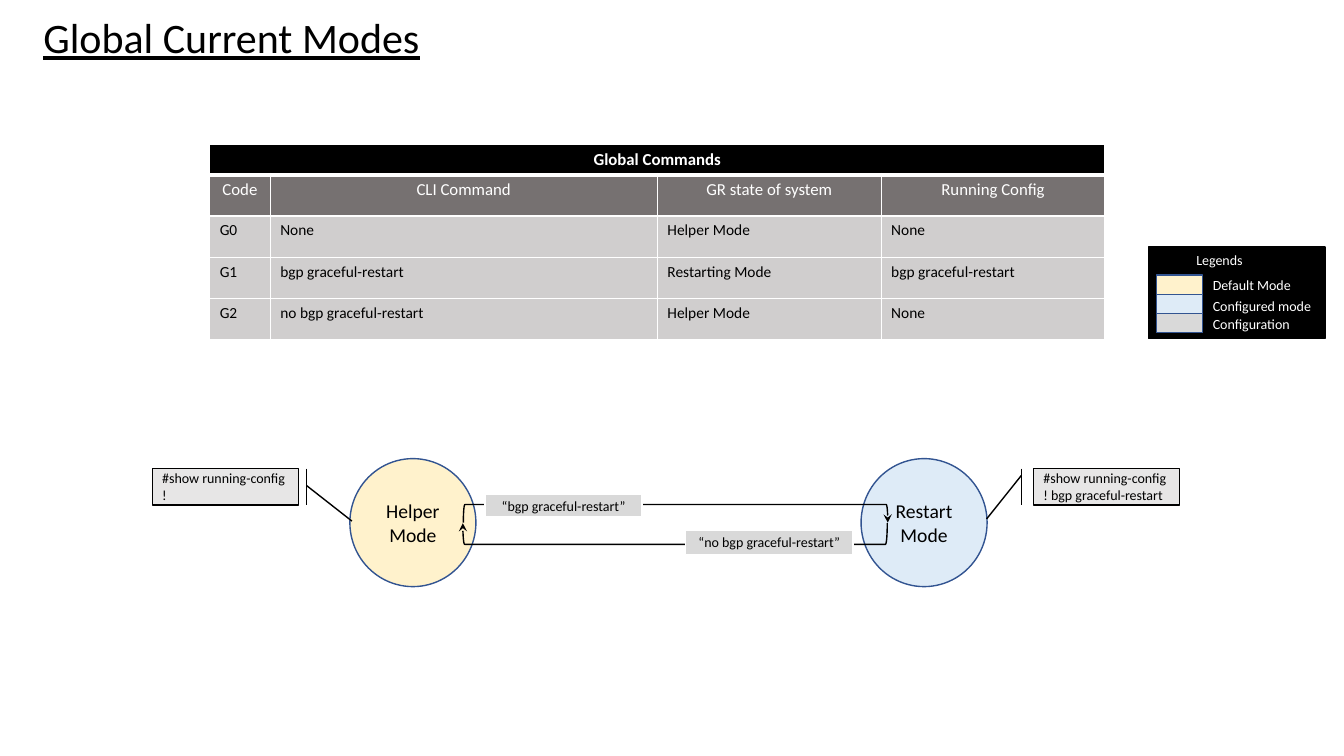
from lxml.etree import SubElement
from pptx import Presentation
from pptx.dml.color import RGBColor
from pptx.enum.shapes import MSO_SHAPE as Shape
from pptx.enum.text import MSO_ANCHOR as Anchor, MSO_AUTO_SIZE as AutoSize, PP_ALIGN as Align
from pptx.oxml.ns import qn
from pptx.util import Inches, Pt

FONT = "Calibri"
BLACK = RGBColor(0x00, 0x00, 0x00)
WHITE = RGBColor(0xFF, 0xFF, 0xFF)
HEADING_GRAY = RGBColor(0x76, 0x71, 0x71)
ROW_GRAY = RGBColor(0xD0, 0xCE, 0xCE)
CONFIG_GRAY = RGBColor(0xD9, 0xD9, 0xD9)
CALLOUT_GRAY = RGBColor(0xE7, 0xE6, 0xE6)
DEFAULT_CREAM = RGBColor(0xFF, 0xF2, 0xCC)
CONFIGURED_BLUE = RGBColor(0xDE, 0xEB, 0xF7)
OUTLINE_BLUE = RGBColor(0x32, 0x54, 0x91)

COLUMN_WIDTHS = (0.6, 3.84, 2.22, 2.22)
COMMAND_ROWS = (
    ("Global Commands", "", "", ""),
    ("Code", "CLI Command", "GR state of system", "Running Config"),
    ("G0", "None", "Helper Mode", "None"),
    ("G1", "bgp graceful-restart", "Restarting Mode", "bgp graceful-restart"),
    ("G2", "no bgp graceful-restart", "Helper Mode", "None"),
)
LEGEND = (
    ("Default Mode", DEFAULT_CREAM, 2.69),
    ("Configured mode", CONFIGURED_BLUE, 2.9),
    ("Configuration", CONFIG_GRAY, 3.08),
)


def write(frame, lines, size, color=BLACK, align=Align.LEFT, bold=False):
    for index, line in enumerate(lines):
        paragraph = frame.add_paragraph() if index else frame.paragraphs[0]
        paragraph.alignment = align
        run = paragraph.add_run()
        run.text = line
        run.font.name = FONT
        run.font.size = Pt(size)
        run.font.bold = bold
        run.font.color.rgb = color


def add_block(shapes, preset, box, fill, line, lines=(), size=10, align=Align.CENTER):
    block = shapes.add_shape(preset, *map(Inches, box))
    block.shadow.inherit = False
    if fill is None:
        block.fill.background()
    else:
        block.fill.solid()
        block.fill.fore_color.rgb = fill
    block.line.color.rgb = line
    block.line.width = Pt(1)
    block.text_frame.vertical_anchor = Anchor.MIDDLE
    write(block.text_frame, lines, size, align=align)
    return block


def add_label(shapes, box, text, align=Align.LEFT):
    label = shapes.add_textbox(*map(Inches, box)).text_frame
    label.word_wrap = True
    label.auto_size = AutoSize.SHAPE_TO_FIT_TEXT
    write(label, [text], 10, WHITE, align)


def add_transition(shapes, box, rotation):
    bracket = add_block(shapes, Shape.LEFT_BRACKET, box, None, BLACK)
    bracket.rotation = rotation
    SubElement(bracket.line._get_or_add_ln(), qn("a:tailEnd"), type="stealth")


def add_callout(shapes, left, lines, pointer):
    callout = add_block(shapes, Shape.LINE_CALLOUT_1_BORDER_AND_ACCENT_BAR,
                        (left, 4.65, 1.45, 0.36), CALLOUT_GRAY, BLACK, lines, align=Align.LEFT)
    for index, value in enumerate(pointer):
        callout.adjustments[index] = value


def format_cell(cell, text, row):
    properties = cell._tc.get_or_add_tcPr()
    for side in ("lnL", "lnR", "lnT", "lnB"):
        thick = (row, side) in ((0, "lnB"), (1, "lnT"))
        border = SubElement(properties, qn(f"a:{side}"), w=str(Pt(3 if thick else 1)))
        SubElement(SubElement(border, qn("a:solidFill")), qn("a:srgbClr"), val=str(WHITE))
    cell.fill.solid()
    cell.fill.fore_color.rgb = (BLACK, HEADING_GRAY)[row] if row < 2 else ROW_GRAY
    if text and row < 2:
        write(cell.text_frame, [text], 12, WHITE, Align.CENTER, bold=row == 0)
    elif text:
        write(cell.text_frame, [text], 11)


def add_command_table(shapes):
    table = shapes.add_table(len(COMMAND_ROWS), len(COLUMN_WIDTHS), Inches(2.08), Inches(1.43),
                             Inches(8.88), Inches(1.92)).table
    table.first_row = False
    table.horz_banding = False
    for column, width in zip(table.columns, COLUMN_WIDTHS):
        column.width = Inches(width)
    for row, texts in enumerate(COMMAND_ROWS):
        table.rows[row].height = Inches(0.41 if row else 0.3)
        for column, text in enumerate(texts):
            format_cell(table.cell(row, column), text, row)
    table.cell(0, 0).merge(table.cell(0, len(COLUMN_WIDTHS) - 1))


def add_mode_diagram(shapes):
    for left, mode, fill in ((3.47, "Helper Mode", DEFAULT_CREAM),
                             (8.54, "Restart Mode", CONFIGURED_BLUE)):
        add_block(shapes, Shape.OVAL, (left, 4.55, 1.25, 1.27), fill, OUTLINE_BLUE, [mode], 14)
    add_transition(shapes, (6.61, 2.99, 0.18, 4.21), 90)
    add_transition(shapes, (6.59, 3.19, 0.21, 4.21), 270)
    for box, command in (((4.81, 4.9, 1.56, 0.23), "“bgp graceful-restart”"),
                         ((6.8, 5.26, 1.66, 0.24), "“no bgp graceful-restart”")):
        add_block(shapes, Shape.RECTANGLE, box, CONFIG_GRAY, WHITE, [command])
    add_callout(shapes, 10.25, ["#show running-config", "! bgp graceful-restart"],
                (0.188, -0.083, 1.389, -0.321))
    add_callout(shapes, 1.51, ["#show running-config", "!"], (0.463, 1.055, 1.445, 1.366))


def add_legend(shapes):
    add_block(shapes, Shape.RECTANGLE, (11.39, 2.45, 1.75, 0.91), BLACK, BLACK)
    add_label(shapes, (11.56, 2.45, 1.07, 0.27), "Legends", Align.CENTER)
    for index, (meaning, fill, label_top) in enumerate(LEGEND):
        swatch = (11.47, 2.73 + 0.19 * index, 0.46, 0.19)
        add_block(shapes, Shape.RECTANGLE, swatch, fill, OUTLINE_BLUE)
        add_label(shapes, (11.93, label_top, 1.21, 0.27), meaning)


def set_title(title, text):
    title.left, title.top, title.width, title.height = map(Inches, (0.33, 0.17, 11.5, 0.45))
    frame = title.text_frame
    frame.vertical_anchor = Anchor.MIDDLE
    frame.auto_size = AutoSize.NONE
    write(frame, [text], 30)
    heading = frame.paragraphs[0]
    heading.line_spacing = 0.9
    heading.runs[0].font.underline = True


def main():
    deck = Presentation()
    deck.slide_width, deck.slide_height = Inches(13.33), Inches(7.5)
    slide = deck.slides.add_slide(deck.slide_layouts[5])
    set_title(slide.shapes.title, "Global Current Modes")
    add_command_table(slide.shapes)
    add_mode_diagram(slide.shapes.add_group_shape().shapes)
    add_legend(slide.shapes.add_group_shape().shapes)
    deck.save("out.pptx")


if __name__ == "__main__":
    main()
